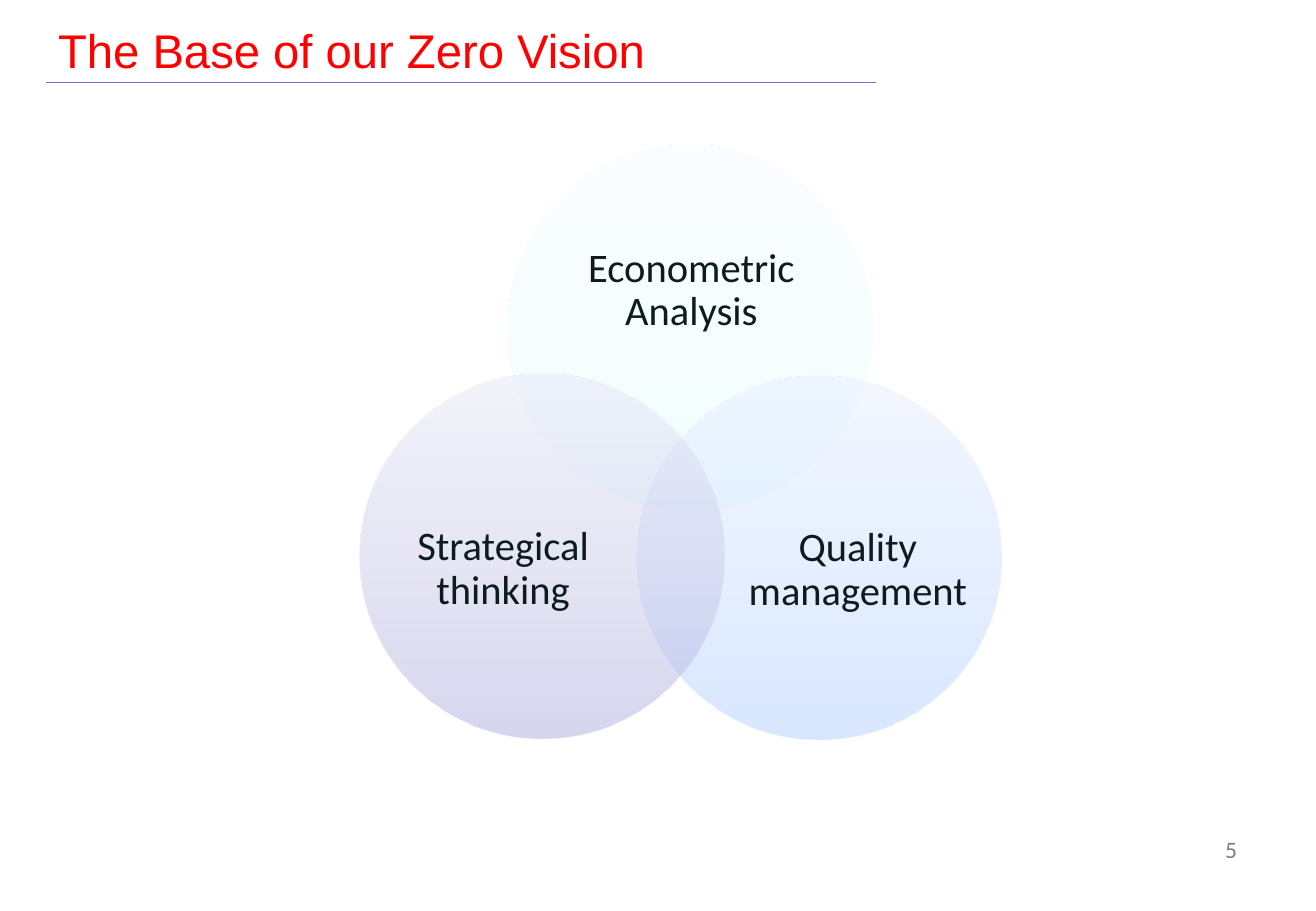
from dataclasses import dataclass

from lxml.etree import SubElement
from pptx import Presentation
from pptx.dml.color import RGBColor
from pptx.enum.shapes import MSO_CONNECTOR, MSO_SHAPE
from pptx.enum.text import MSO_ANCHOR as Anchor, PP_ALIGN as Align
from pptx.oxml.ns import qn
from pptx.slide import Slide
from pptx.text.text import TextFrame
from pptx.util import Inches, Pt


@dataclass(frozen=True)
class Theme:
    heading_font: str = "Arial"
    body_font: str = "Calibri"
    heading: str = "FF0000"
    rule: str = "7575D1"
    label: str = "0C1C1D"
    page: str = "808080"
    heading_size: int = 28
    label_size: int = 24
    page_size: int = 14


@dataclass(frozen=True)
class Box:
    left: float
    top: float
    width: float
    height: float

    def emu(self) -> tuple[int, ...]:
        return tuple(Inches(v) for v in (self.left, self.top, self.width, self.height))


@dataclass(frozen=True)
class Pillar:
    label: str
    left: float
    top: float
    label_box: Box
    shades: tuple[str, str, str]  # from bottom to top


THEME = Theme()
DIAMETER = 3
STOPS = (0, 35, 100)
OPACITY = 50
PILLARS = (
    Pillar("Econometric Analysis", 4.18, 1.2, Box(4.59, 1.72, 2.2, 1.35),
           ("E6FDFF", "ECFDFF", "F8FEFF")),
    Pillar("Quality management", 5.24, 3.09, Box(6.16, 3.87, 1.8, 1.65),
           ("B2D0FF", "C8DDFF", "EAF2FF")),
    Pillar("Strategical thinking", 2.96, 3.08, Box(3.24, 3.86, 1.8, 1.65),
           ("ADADE1", "C6C6E9", "E9E9F7")),
)


def add_text(slide: Slide, words: str, box: Box, font: str, size: int, color: str,
             align: Align = Align.LEFT, anchor: Anchor = Anchor.MIDDLE) -> TextFrame:
    frame = slide.shapes.add_textbox(*box.emu()).text_frame
    frame.text = words
    frame.word_wrap = True
    frame.vertical_anchor = anchor
    paragraph = frame.paragraphs[0]
    paragraph.alignment = align
    style = paragraph.runs[0].font
    style.name = font
    style.size = Pt(size)
    style.color.rgb = RGBColor.from_string(color)
    return frame


def add_pillar(slide: Slide, pillar: Pillar) -> None:
    # Translucent circle
    area = Box(pillar.left, pillar.top, DIAMETER, DIAMETER)
    circle = slide.shapes.add_shape(MSO_SHAPE.OVAL, *area.emu())
    circle.shadow.inherit = False
    circle.line.fill.background()
    circle.fill.gradient()
    circle.fill.gradient_angle = 90
    stop_list = circle._element.spPr.find(qn("a:gradFill")).find(qn("a:gsLst"))
    for stop in list(stop_list):
        stop_list.remove(stop)
    for position, shade in zip(STOPS, pillar.shades):
        stop = SubElement(stop_list, qn("a:gs"), pos=str(position * 1000))
        color = SubElement(stop, qn("a:srgbClr"), val=shade)
        SubElement(color, qn("a:alpha"), val=str(OPACITY * 1000))

    # Label
    frame = add_text(slide, pillar.label, pillar.label_box, THEME.body_font,
                     THEME.label_size, THEME.label, Align.CENTER)
    frame.margin_left = frame.margin_right = frame.margin_top = frame.margin_bottom = 0
    frame.paragraphs[0].line_spacing = 0.9


def add_rule(slide: Slide, left: float, right: float, y: float) -> None:
    rule = slide.shapes.add_connector(
        MSO_CONNECTOR.STRAIGHT, Inches(right), Inches(y), Inches(left), Inches(y))
    rule.line.color.rgb = RGBColor.from_string(THEME.rule)
    rule.line.width = Pt(0.75)
    SubElement(rule._element.spPr, qn("a:effectLst"))


def main() -> None:
    deck = Presentation()
    deck.slide_width, deck.slide_height = Inches(10.83), Inches(7.5)
    slide = deck.slides.add_slide(deck.slide_layouts[6])

    # Heading and its rule
    add_rule(slide, 0.38, 7.21, 0.68)
    add_text(slide, "The Base of our Zero Vision", Box(0.38, 0.13, 6.82, 0.55),
             THEME.heading_font, THEME.heading_size, THEME.heading)

    # Page number
    add_text(slide, "5", Box(9.51, 6.82, 0.77, 0.55), THEME.body_font,
             THEME.page_size, THEME.page, Align.RIGHT, Anchor.TOP)

    # Overlapping circles
    for pillar in PILLARS:
        add_pillar(slide, pillar)

    deck.save("out.pptx")


if __name__ == "__main__":
    main()
